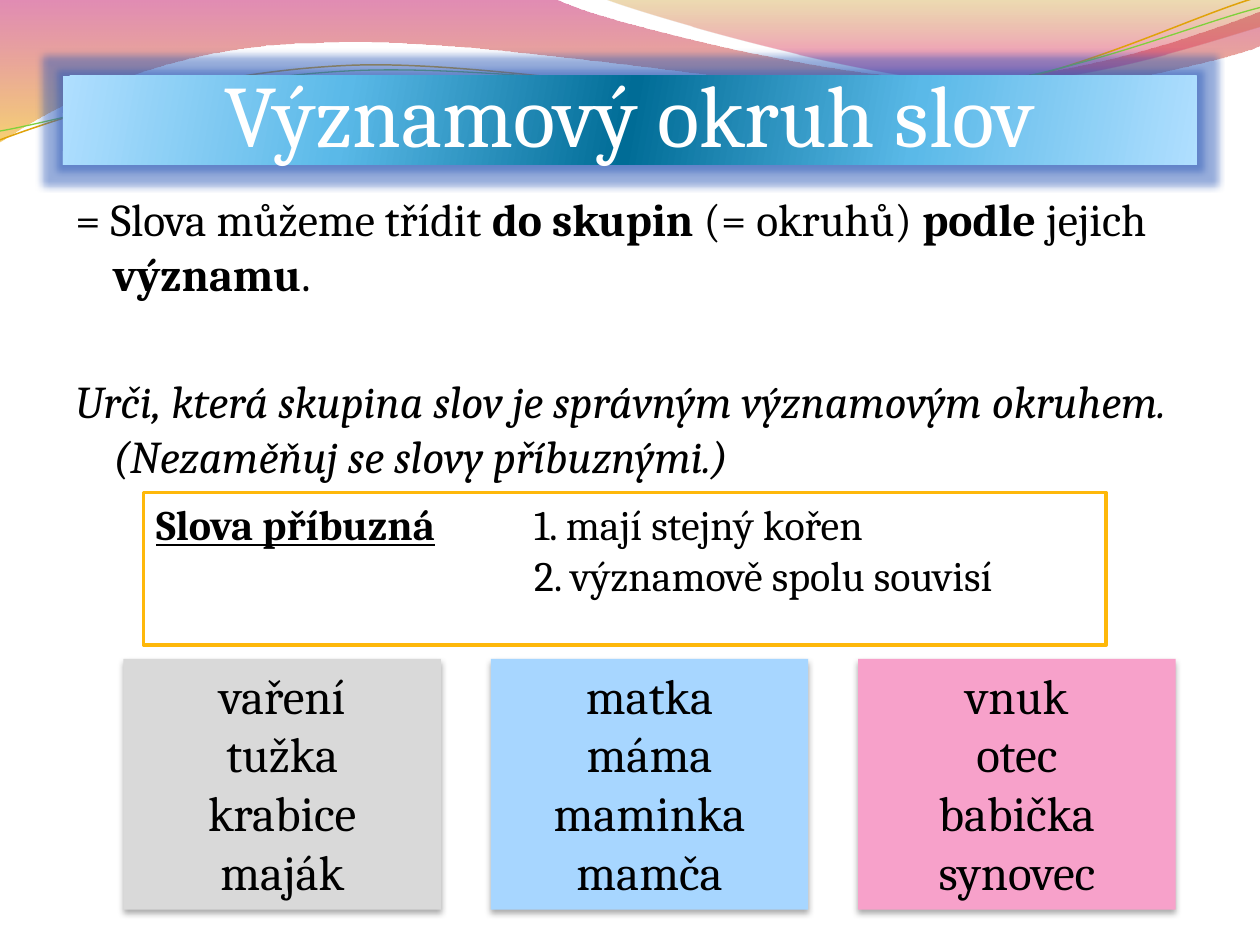
import pptx
import pptx.util
import pptx.dml.color
import pptx.enum.shapes
import pptx.enum.text
import pptx.oxml
import pptx.oxml.ns

Inches, Pt = pptx.util.Inches, pptx.util.Pt
RGB = pptx.dml.color.RGBColor
Align = pptx.enum.text.PP_ALIGN
Anchor = pptx.enum.text.MSO_ANCHOR
qn = pptx.oxml.ns.qn
NS = pptx.oxml.ns.nsdecls("a")

WIDE, HIGH = 10, 7.5
FONT = "Cambria"
BLACK, WHITE = RGB(0, 0, 0), RGB(255, 255, 255)
GRAY, SKY, PINK = RGB(0xD9, 0xD9, 0xD9), RGB(0xA7, 0xD6, 0xFF), RGB(0xF7, 0xA1, 0xCA)
AMBER, GOLD, GREEN = RGB(0xFE, 0xB8, 0x0A), RGB(0xE0, 0xA2, 0x09), RGB(0x7F, 0xD1, 0x3B)
ROSE, SUN = RGB(0xBD, 0, 0x59), RGB(0xF0, 0xAB, 0)
SAND, RUBY = RGB(0xC3, 0x8B, 0), RGB(0xE1, 0, 0x6B)
PALE, AZURE, TEAL = RGB(0xB0, 0xDF, 0xFF), RGB(0x5A, 0xB9, 0xE8), RGB(0, 0x6C, 0x96)
GLOW = RGB(0x30, 0x5C, 0xB8)


def share(x, y, w, h):
    """Box in inches from percentages of the slide."""
    return x * WIDE / 100, y * HIGH / 100, w * WIDE / 100, h * HIGH / 100


def tint(color, alpha):
    return f'<a:srgbClr val="{color}"><a:alpha val="{alpha * 1000}"/></a:srgbClr>'


def blend(shape, stops, angle):
    """Gradient fill from (position, colour, opacity) stops."""
    marks = "".join(f'<a:gs pos="{pos * 1000}">{tint(color, alpha)}</a:gs>'
                    for pos, color, alpha in stops)
    shape.fill.background()
    props = shape._element.spPr
    props.replace(props.find(qn("a:noFill")), pptx.oxml.parse_xml(
        f'<a:gradFill {NS} rotWithShape="1"><a:gsLst>{marks}</a:gsLst>'
        f'<a:lin ang="{angle * 60000}" scaled="0"/></a:gradFill>'))


def effect(shape, xml):
    props = shape._element.spPr
    props.find(qn("a:effectLst")).append(pptx.oxml.parse_xml(xml))


def block(slide, box, fill, edge=None):
    """Filled rectangle ready for text."""
    shape = slide.shapes.add_shape(pptx.enum.shapes.MSO_SHAPE.RECTANGLE,
                                   *map(Inches, box))
    shape.shadow.inherit = False
    shape.fill.solid()
    shape.fill.fore_color.rgb = fill
    if edge is None:
        shape.line.fill.background()
    else:
        shape.line.color.rgb = edge
        shape.line.width = Pt(2)
    shape.text_frame.word_wrap = True
    shape.text_frame.vertical_anchor = Anchor.TOP
    return shape


def label(slide, box):
    shape = slide.shapes.add_textbox(*map(Inches, box))
    shape.text_frame.word_wrap = True
    return shape


def write(para, text, size, color=BLACK, bold=False, italic=False, under=False):
    run = para.add_run()
    run.text = text
    font = run.font
    font.name, font.size, font.color.rgb = FONT, Pt(size), color
    font.bold, font.italic, font.underline = bold, italic, under


def sweep(shapes, box, start, parts, closed):
    """Outline of lines (one point) and Bezier curves (three), in % of the box."""
    x, y, w, h = box
    dots = [(Inches(x + px * w / 100), Inches(y + py * h / 100))
            for px, py in [start] + [dot for part in parts for dot in part]]
    pen = shapes.build_freeform(*dots[0])
    pen.add_line_segments(dots[1:], close=closed)
    shape = pen.convert_to_shape()
    shape.shadow.inherit = False

    # Turn each run of three segments into one curve
    lines = iter(list(shape._element.spPr.iter(qn("a:lnTo"))))
    for part in parts:
        group = [next(lines) for _ in part]
        if len(group) == 3:
            curve = pptx.oxml.parse_xml(f"<a:cubicBezTo {NS}/>")
            group[0].addprevious(curve)
            for line in group:
                curve.append(line[0])
                line.getparent().remove(line)
    return shape


def waves(slide, box):
    # Translucent bands
    bands = [
        ((0, -1), [[(44, -1)],
                   [(47.6, 17), (66.4, 63), (75.8, 63)],
                   [(85.3, 63), (95.8, 26), (100, 9)],
                   [(100.1, 36)],
                   [(98.3, 44), (87, 76), (74.6, 75)],
                   [(62.2, 75), (38.2, 28), (25.7, 34)],
                   [(12.9, 35), (4.6, 83), (-0.1, 113)]],
         [(0, ROSE, 45), (100, SUN, 55)]),
        ((47.9, -1), [[(50.9, 11), (68.2, 62), (76.9, 65)],
                      [(85.6, 69), (96.1, 32), (100, 21)],
                      [(100, 0)]],
         [(0, SAND, 30), (80, RUBY, 45)]),
    ]
    for start, parts, stops in bands:
        shape = sweep(slide.shapes, box, start, parts, True)
        blend(shape, stops, 90)
        shape.line.fill.background()

    # Thin curves, tilted together
    threads = [
        ((-0.2, 87.5), [[(4.7, 71.8), (15.8, 40.9), (27.8, 41.5)],
                        [(39.6, 42.1), (59.2, 93.4), (71.2, 90.1)],
                        [(83.2, 86.7), (94, 35.7), (100, 21.5)]], GOLD, 0.85),
        ((-0.2, 80.5), [[(4.6, 74.7), (16.4, 45.2), (28.3, 45.8)],
                        [(40.4, 46.5), (59.6, 87.6), (71.6, 85.2)],
                        [(83.6, 82.8), (94.2, 41.8), (100.2, 29.6)]], GREEN, 0.75),
    ]
    group = slide.shapes.add_group_shape()
    for start, parts, color, width in threads:
        shape = sweep(group.shapes, box, start, parts, False)
        shape.rotation = 357.3
        shape.fill.background()
        shape.line.color.rgb = color
        shape.line.width = Pt(width)


def banner(slide, box):
    shape = label(slide, box)
    shape.shadow.inherit = False
    blend(shape, [(0, PALE, 100), (25, AZURE, 100), (50, TEAL, 100),
                  (75, AZURE, 100), (100, PALE, 100)], 10)
    effect(shape, f'<a:glow {NS} rad="{Pt(8)}">{tint(GLOW, 50)}</a:glow>')
    frame = shape.text_frame
    frame.vertical_anchor = Anchor.BOTTOM
    frame.margin_left = frame.margin_right = frame.margin_bottom = 0
    para = frame.paragraphs[0]
    para.alignment = Align.CENTER
    write(para, "Významový okruh slov", 50, WHITE)


def body(slide, box):
    frame = label(slide, box).text_frame
    rule, task = frame.paragraphs[0], frame.add_paragraph()
    for para, gap in ((rule, 5.2), (task, 41.4)):
        para.space_before = Pt(gap)
        props = para._p.get_or_add_pPr()
        props.set("marL", str(Inches(0.3)))
        props.set("indent", str(Inches(-0.3)))
    for text, bold in (("= Slova můžeme třídit ", False), ("do skupin ", True),
                       ("(= okruhů) ", False), ("podle", True),
                       (" jejich ", False), ("významu", True), (".", False)):
        write(rule, text, 26, bold=bold)
    write(task, "Urči, která skupina slov je správným významovým okruhem. "
                "(Nezaměňuj se slovy příbuznými.)", 26, italic=True)


def hint(slide, box):
    frame = block(slide, box, WHITE, AMBER).text_frame
    first, second = frame.paragraphs[0], frame.add_paragraph()
    first.alignment = second.alignment = Align.LEFT
    stop = Inches(3)
    first._p.get_or_add_pPr().append(pptx.oxml.parse_xml(
        f'<a:tabLst {NS}><a:tab pos="{stop}" algn="l"/></a:tabLst>'))
    second._p.get_or_add_pPr().set("marL", str(stop))
    second._p.get_or_add_pPr().set("indent", "0")
    write(first, "Slova příbuzná", 24, bold=True, under=True)
    write(first, "\t", 24, bold=True)
    write(first, "1. mají stejný kořen", 24)
    write(second, "2. významově spolu souvisí", 24)


def cards(slide, box, groups, gap=0.395):
    x, y, w, h = box
    wide = (w - gap * (len(groups) - 1)) / len(groups)
    # Laid from right to left
    for i, (fill, words) in reversed(list(enumerate(groups))):
        shape = block(slide, (x + i * (wide + gap), y, wide, h), fill)
        effect(shape, f'<a:outerShdw {NS} blurRad="{Pt(3.5)}" dist="{Pt(2.2)}" '
                      f'dir="5400000">{tint(BLACK, 32)}</a:outerShdw>')
        frame = shape.text_frame
        for j, word in enumerate(words):
            para = frame.add_paragraph() if j else frame.paragraphs[0]
            para.alignment = Align.CENTER
            write(para, word, 28)


def main():
    deck = pptx.Presentation()
    deck.slide_width, deck.slide_height = Inches(WIDE), Inches(HIGH)
    slide = deck.slides.add_slide(deck.slide_layouts[6])
    waves(slide, share(0, 0, 100, 13.33))
    banner(slide, share(5, 8, 90, 9.47))
    body(slide, share(5, 19.6, 90, 64))
    cards(slide, share(9.8, 69.73, 83.5, 26.53), [
        (GRAY, ("vaření", "tužka", "krabice", "maják")),
        (SKY, ("matka", "máma", "maminka", "mamča")),
        (PINK, ("vnuk", "otec", "babička", "synovec"))])
    hint(slide, share(11.4, 52.13, 76.4, 16.13))
    deck.save("out.pptx")


if __name__ == "__main__":
    main()
